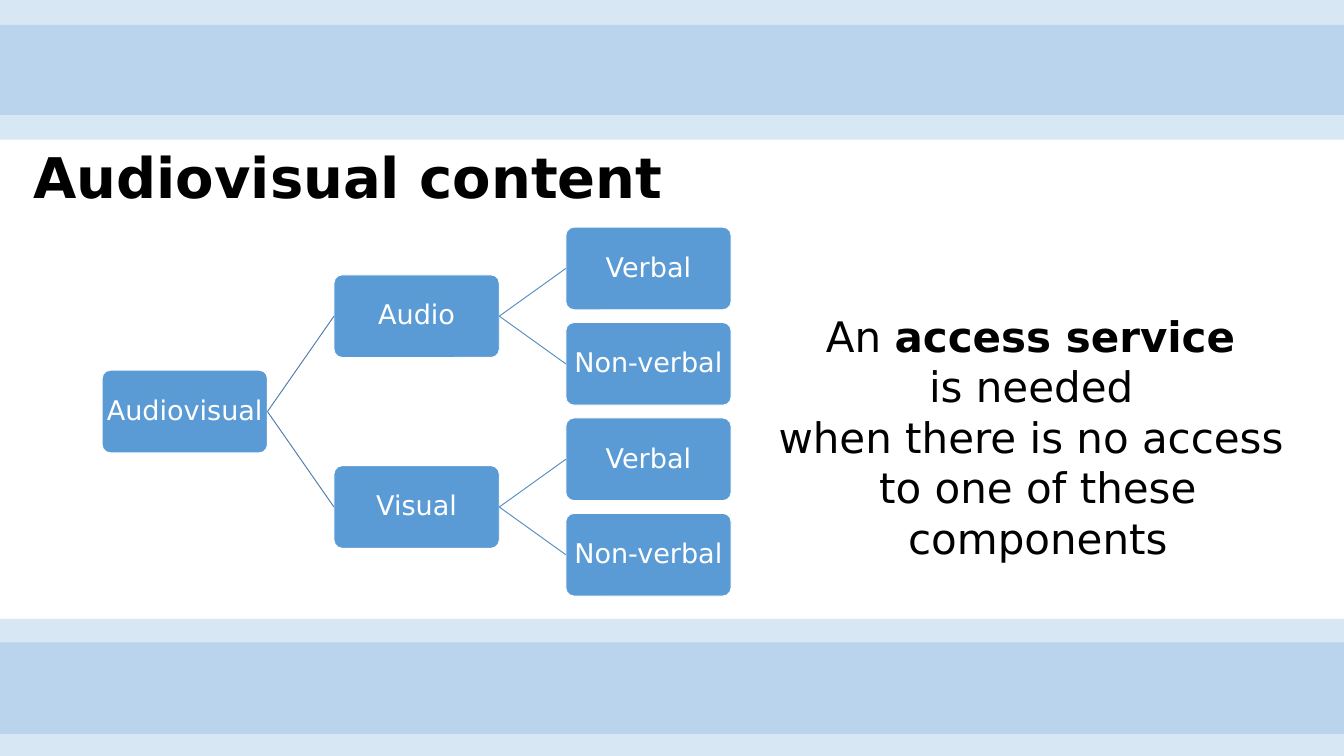
from dataclasses import dataclass

from lxml.etree import SubElement
from pptx import Presentation
from pptx.dml.color import RGBColor
from pptx.enum.shapes import MSO_CONNECTOR, MSO_SHAPE
from pptx.enum.text import MSO_ANCHOR, MSO_AUTO_SIZE, PP_ALIGN
from pptx.oxml.ns import qn
from pptx.shapes.autoshape import Shape
from pptx.slide import Slide
from pptx.text.text import Font, TextFrame
from pptx.util import Inches, Pt


@dataclass(frozen=True)
class Theme:
    font: str = "DejaVu Sans"
    text: RGBColor = RGBColor(0, 0, 0)
    white: RGBColor = RGBColor(255, 255, 255)
    blue: RGBColor = RGBColor.from_string("5B9BD5")
    edges: tuple[RGBColor, ...] = (
        RGBColor.from_string("497CAB"),
        RGBColor.from_string("538DC1"),
    )
    band_opacity: int = 24
    title_size: int = 60
    node_size: int = 29
    message_size: int = 45
    message_line: int = 54


@dataclass(frozen=True)
class Grid:
    left: float = 1.52
    top: float = 3.38
    column_step: float = 3.45
    row_step: float = 1.42
    node_width: float = 2.46
    node_height: float = 1.23


@dataclass(frozen=True)
class Node:
    label: str
    row: float
    children: tuple["Node", ...] = ()


THEME = Theme()
GRID = Grid()
SLIDE_WIDTH, SLIDE_HEIGHT = 20, 11.25
BAND_HEIGHT = 1.71
BAND_TOPS = (0, 0.37, 9.21, 9.56)

TREE = Node("Audiovisual", 1.5, (
    Node("Audio", 0.5, (Node("Verbal", 0), Node("Non-verbal", 1))),
    Node("Visual", 2.5, (Node("Verbal", 2), Node("Non-verbal", 3))),
))

# Each line is a tuple of (text, bold) runs
MESSAGE = (
    (("An ", False), ("access service ", True)),
    (("is needed ", False),),
    (("when there is no access ", False),),
    (("to one of these components", False),),
)


def set_font(font: Font, size: int, color: RGBColor) -> None:
    font.name = THEME.font
    font.size = Pt(size)
    font.color.rgb = color


def set_margins(frame: TextFrame, horizontal: float, vertical: float) -> None:
    frame.margin_left = frame.margin_right = Inches(horizontal)
    frame.margin_top = frame.margin_bottom = Inches(vertical)


def add_band(slide: Slide, top: float) -> None:
    """Add a translucent band across the slide."""
    height = min(BAND_HEIGHT, SLIDE_HEIGHT - top)
    band = slide.shapes.add_shape(
        MSO_SHAPE.RECTANGLE, 0, Inches(top), Inches(SLIDE_WIDTH), Inches(height))
    band.shadow.inherit = False
    band.fill.solid()
    band.fill.fore_color.rgb = THEME.blue
    band.line.fill.background()
    color = band.fill._xPr.find(f".//{qn('a:srgbClr')}")
    SubElement(color, qn("a:alpha"), val=str(THEME.band_opacity * 1000))


def add_title(slide: Slide, text: str) -> None:
    title = slide.shapes.title
    title.left, title.top = Inches(0.35), Inches(2.11)
    title.width, title.height = Inches(13.31), Inches(1.16)
    frame = title.text_frame
    frame.text = text
    frame.auto_size = MSO_AUTO_SIZE.NONE
    frame.vertical_anchor = MSO_ANCHOR.MIDDLE
    set_margins(frame, 0.15, 0.07)
    paragraph = frame.paragraphs[0]
    paragraph.alignment = PP_ALIGN.LEFT
    paragraph.line_spacing = 0.9
    set_font(paragraph.font, THEME.title_size, THEME.text)
    paragraph.font.bold = True


def add_node(slide: Slide, node: Node, column: int) -> Shape:
    box = slide.shapes.add_shape(
        MSO_SHAPE.ROUNDED_RECTANGLE,
        Inches(GRID.left + column * GRID.column_step),
        Inches(GRID.top + node.row * GRID.row_step),
        Inches(GRID.node_width), Inches(GRID.node_height))
    box.adjustments[0] = 0.1
    box.shadow.inherit = False
    box.fill.solid()
    box.fill.fore_color.rgb = THEME.blue
    box.line.color.rgb = THEME.white
    box.line.width = Pt(1)
    # Labels are single lines that nearly fill the box
    frame = box.text_frame
    frame.text = node.label
    frame.word_wrap = False
    frame.vertical_anchor = MSO_ANCHOR.MIDDLE
    set_margins(frame, 0.02, 0.02)
    paragraph = frame.paragraphs[0]
    paragraph.alignment = PP_ALIGN.CENTER
    paragraph.line_spacing = 0.9
    set_font(paragraph.font, THEME.node_size, THEME.white)
    return box


def add_edge(slide: Slide, parent: Shape, child: Shape, color: RGBColor) -> None:
    """Join the parent's right side to the child's left side."""
    edge = slide.shapes.add_connector(MSO_CONNECTOR.STRAIGHT, 0, 0, 0, 0)
    edge.begin_connect(parent, 3)
    edge.end_connect(child, 1)
    edge.line.color.rgb = color
    edge.line.width = Pt(1)
    SubElement(edge._element.spPr, qn("a:effectLst"))


def add_tree(slide: Slide, node: Node, column: int = 0) -> Shape:
    box = add_node(slide, node, column)
    for child in node.children:
        child_box = add_tree(slide, child, column + 1)
        add_edge(slide, box, child_box, THEME.edges[column])
    return box


def add_message(slide: Slide) -> None:
    box = slide.shapes.add_textbox(
        Inches(11.39), Inches(4.56), Inches(8.11), Inches(3.89))
    frame = box.text_frame
    frame.word_wrap = True
    set_margins(frame, 0.15, 0.06)
    for index, line in enumerate(MESSAGE):
        paragraph = frame.add_paragraph() if index else frame.paragraphs[0]
        paragraph.alignment = PP_ALIGN.CENTER
        paragraph.line_spacing = Pt(THEME.message_line)
        set_font(paragraph.font, THEME.message_size, THEME.text)
        for text, bold in line:
            run = paragraph.add_run()
            run.text = text
            run.font.bold = bold


def main() -> None:
    presentation = Presentation()
    presentation.slide_width = Inches(SLIDE_WIDTH)
    presentation.slide_height = Inches(SLIDE_HEIGHT)
    slide = presentation.slides.add_slide(presentation.slide_layouts[5])

    # Bands at the top and bottom edges
    for top in BAND_TOPS:
        add_band(slide, top)

    # Title, tree of components and message
    add_title(slide, "Audiovisual content")
    add_tree(slide, TREE)
    add_message(slide)

    presentation.save("out.pptx")


if __name__ == "__main__":
    main()
